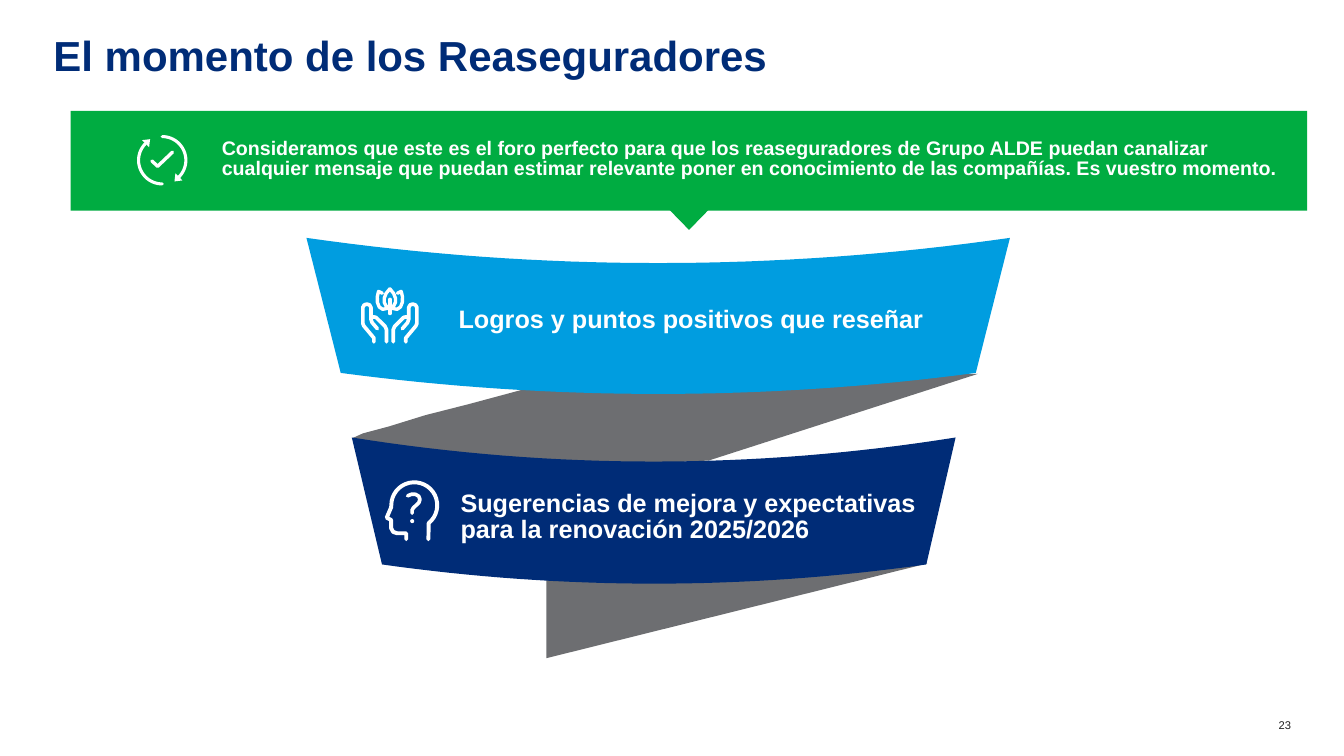
from dataclasses import dataclass
from math import cos, radians, sin

from lxml.etree import SubElement
from pptx import Presentation
from pptx.dml.color import RGBColor
from pptx.enum.shapes import MSO_SHAPE as Preset
from pptx.enum.text import MSO_ANCHOR as Anchor, MSO_AUTO_SIZE as AutoSize, PP_ALIGN as Align
from pptx.oxml.ns import qn
from pptx.util import Pt


@dataclass(frozen=True)
class Theme:
    font: str = "Arial"
    navy: str = "002C77"
    sky: str = "009DE0"
    green: str = "00AC41"
    grey: str = "6D6E71"
    white: str = "FFFFFF"
    ink: str = "202020"
    title_size: float = 30
    band_size: float = 18
    banner_size: float = 14
    number_size: float = 8
    tight: float = 0.86


THEME = Theme()


def rgb(color):
    return RGBColor.from_string(color)


def write(shape, box, text, size, color, bold=True, spacing=THEME.tight, align=Align.LEFT):
    shape.left, shape.top, shape.width, shape.height = map(Pt, box)
    frame = shape.text_frame
    frame.word_wrap = True
    frame.auto_size = AutoSize.NONE
    frame.vertical_anchor = Anchor.TOP
    frame.margin_left = frame.margin_top = frame.margin_right = frame.margin_bottom = 0
    paragraph = frame.paragraphs[0]
    paragraph.alignment = align
    paragraph.line_spacing = spacing
    run = paragraph.add_run()
    run.text = text
    font = run.font
    font.name, font.size, font.bold = THEME.font, Pt(size), bold
    font.color.rgb = rgb(color)


def add_text(slide, box, *args, **options):
    write(slide.shapes.add_textbox(*map(Pt, box)), box, *args, **options)


def fill_plain(shape, color):
    shape.shadow.inherit = False
    shape.fill.solid()
    shape.fill.fore_color.rgb = rgb(color)
    shape.line.fill.background()


def add_preset(slide, preset, box, color):
    shape = slide.shapes.add_shape(preset, *map(Pt, box))
    fill_plain(shape, color)
    return shape


def trace(slide, contours, close):
    """Build one freeform from several lists of (x, y) points."""
    outlines = [[(Pt(x), Pt(y)) for x, y in contour] for contour in contours]
    builder = slide.shapes.build_freeform(*outlines[0][0])
    for index, outline in enumerate(outlines):
        if index:
            builder.move_to(*outline[0])
        builder.add_line_segments(outline[1:], close=close)
    return builder.convert_to_shape()


def add_area(slide, color, points):
    fill_plain(trace(slide, [points], close=True), color)


def add_strokes(slide, width, *contours):
    """Draw open white lines with round ends and joins."""
    shape = trace(slide, contours, close=False)
    shape.shadow.inherit = False
    shape.fill.background()
    shape.line.color.rgb = rgb(THEME.white)
    shape.line.width = Pt(width)
    outline = shape.line._get_or_add_ln()
    outline.set("cap", "rnd")
    SubElement(outline, qn("a:round"))


def arc(center, radius, start, end, steps=24):
    """Points on a circle; angles in degrees, clockwise from the right."""
    angles = [radians(start + (end - start) * i / steps) for i in range(steps + 1)]
    return [(center[0] + radius * cos(a), center[1] + radius * sin(a)) for a in angles]


def sagging_edge(left, right, top, sag, steps=32):
    shares = [i / steps for i in range(steps + 1)]
    return [(left + (right - left) * t, top + 4 * sag * t * (1 - t)) for t in shares]


def add_band(slide, color, upper, lower):
    add_area(slide, color, sagging_edge(*upper) + sagging_edge(*lower)[::-1])


def mirrored(points, axis):
    return [(2 * axis - x, y) for x, y in points]


def add_hands_icon(slide):
    axis = 278.5
    outer_hand = [(267.1, 244.2), (267.1, 241.4), (259.9, 232.8), (259.2, 231), (259.2, 219.6),
                  (260.2, 217.8), (262.1, 217.2), (264, 217.8), (265, 219.6), (265, 228),
                  (265.8, 230.4), (269.6, 234.8)]
    thumb = [(265, 227.4), (266.6, 226.3), (268.6, 226.7), (275, 233), (276.1, 235.4), (276.1, 244.2)]
    for hand in ([outer_hand, thumb], [mirrored(outer_hand, axis), mirrored(thumb, axis)]):
        add_strokes(slide, 2.6, *hand)
    middle_petal = [(278.5, 206.3), (275.8, 209.6), (274.5, 213), (274.5, 216),
                    (275.8, 218.6), (278.5, 220.6)]
    side_petal = [(273.1, 209.5), (270.4, 208.2), (269.5, 212), (269.6, 216),
                  (270.9, 219.3), (273.4, 221), (277, 220.2)]
    stem = [(axis, 213.8), (axis, 224)]
    add_strokes(slide, 2.4, middle_petal, mirrored(middle_petal, axis),
                side_petal, mirrored(side_petal, axis), stem)


def add_thinker_icon(slide):
    face = [(290.2, 385.2), (290.2, 380.9), (283.7, 380.9), (280.9, 380), (279.4, 377.3),
            (279.4, 371.4), (276.2, 369.8), (279.4, 362.4)]
    skull = arc((295.9, 360.9), 16.4, 180, 411)
    add_strokes(slide, 2.8, face + skull + [(306, 385.2)])
    add_preset(slide, Preset.OVAL, (293, 370.8, 2.9, 2.9), THEME.white)
    add_strokes(slide, 2.6, [(291.2, 354.2), (293.8, 353.1), (296.8, 353.1), (299.2, 354.5),
                             (300, 356.8), (299.2, 359.2), (295.4, 362.7), (294.4, 364.4), (294.4, 366.6)])


def add_cycle_icon(slide):
    center = (115.9, 114.5)
    add_strokes(slide, 2.4, [(108.5, 115), (112.6, 118.8), (123.2, 108.7)])
    arrowhead = [(125.3, 123.8), (124.6, 129.6), (130.3, 128.9)]
    turned = [(2 * center[0] - x, 2 * center[1] - y) for x, y in arrowhead]
    for start, head in ((-90, arrowhead), (90, turned)):
        add_strokes(slide, 2.2, arc(center, 16.9, start, start + 135))
        add_area(slide, THEME.white, head)


def add_funnel(slide):
    add_area(slide, THEME.grey, [(417.6, 267.1), (391, 273.6), (334.8, 288.7), (303.8, 296.6),
                                 (277.9, 304.6), (259.2, 309.6), (251.3, 313.2), (358.6, 336.2),
                                 (506.2, 329), (698.4, 267.1)])
    add_area(slide, THEME.grey, [(390.2, 413.3), (390.2, 470.2), (662.4, 402.5)])
    add_band(slide, THEME.sky, (218.9, 721.4, 169.9, 18), (243.4, 697, 266.4, 15))
    add_band(slide, THEME.navy, (251.3, 682.6, 312.5, 17.2), (272.9, 661.7, 403.2, 13.7))
    add_text(slide, (327.6, 219.6, 380.2, 18.7), "Logros y puntos positivos que reseñar",
             THEME.band_size, THEME.white)
    add_hands_icon(slide)
    add_text(slide, (329, 351.4, 339.8, 37.4),
             "Sugerencias de mejora y expectativas para la renovación 2025/2026",
             THEME.band_size, THEME.white)
    add_thinker_icon(slide)


def add_banner(slide):
    add_preset(slide, Preset.RECTANGLE, (50.4, 79.2, 883.4, 71.3), THEME.green)
    pointer = add_preset(slide, Preset.ISOSCELES_TRIANGLE, (478.1, 149.8, 28.1, 14.4), THEME.green)
    pointer.rotation = 180
    add_text(slide, (158.4, 99.4, 755.3, 29.5),
             "Consideramos que este es el foro perfecto para que los reaseguradores de Grupo ALDE "
             "puedan canalizar cualquier mensaje que puedan estimar relevante poner en conocimiento "
             "de las compañías. Es vuestro momento.",
             THEME.banner_size, THEME.white)
    add_cycle_icon(slide)


def main():
    deck = Presentation()
    deck.slide_width, deck.slide_height = Pt(960), Pt(540)
    slide = deck.slides.add_slide(deck.slide_layouts[5])
    write(slide.shapes.title, (38.2, 28.1, 883.4, 38.9), "El momento de los Reaseguradores",
          THEME.title_size, THEME.navy, spacing=0.8)
    add_text(slide, (900, 513.4, 22.3, 9.4), "23", THEME.number_size, THEME.ink,
             bold=False, spacing=1.0, align=Align.RIGHT)
    add_funnel(slide)
    add_banner(slide)
    deck.save("out.pptx")


if __name__ == "__main__":
    main()
